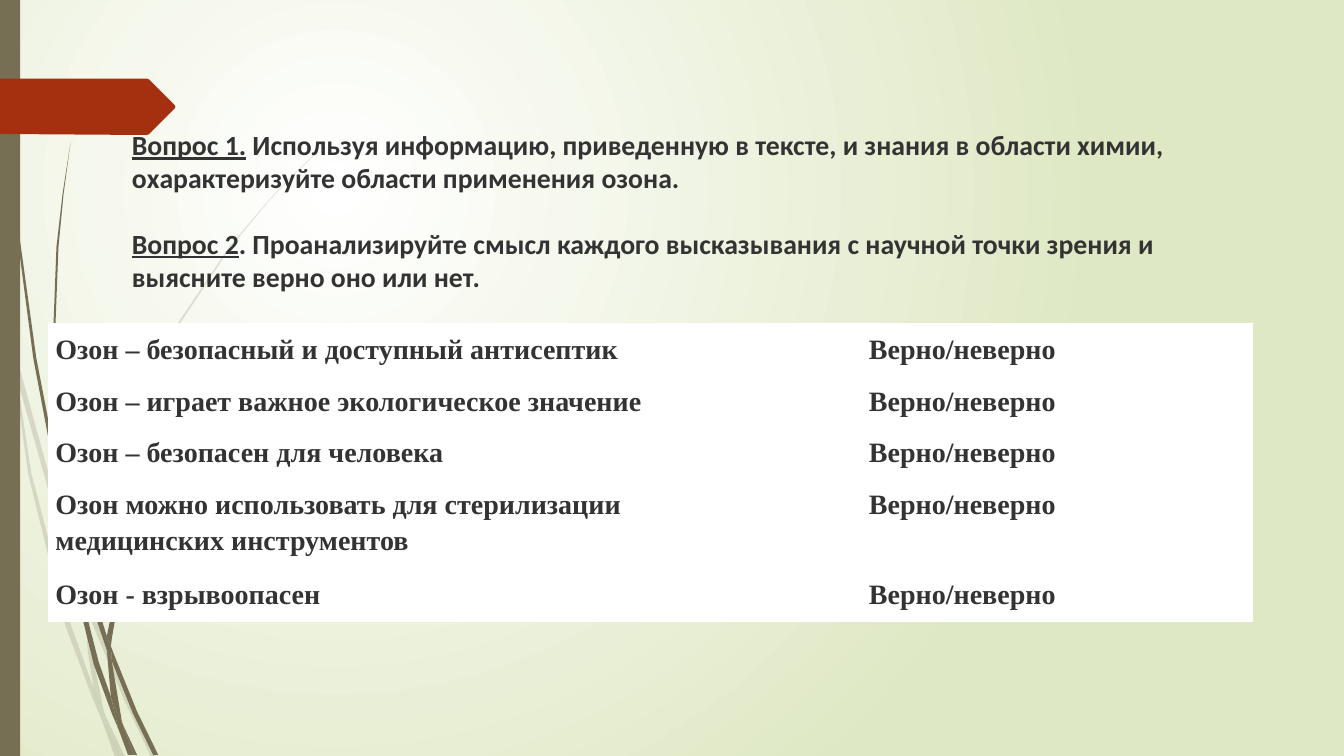
from lxml.etree import SubElement
from pptx import Presentation
from pptx.dml.color import RGBColor
from pptx.enum.shapes import MSO_SHAPE
from pptx.enum.text import MSO_ANCHOR, PP_ALIGN
from pptx.oxml.ns import qn
from pptx.util import Pt

SCALE = 9144  # EMU in one px, 100 px to the inch
WHITE = RGBColor(0xFF, 0xFF, 0xFF)
LIME = RGBColor(0xDF, 0xE8, 0xC4)
OLIVE = RGBColor(0x76, 0x6F, 0x54)
RUST = RGBColor(0xA5, 0x30, 0x10)
DARK = RGBColor(0x33, 0x33, 0x33)

# Outlines of the grass blades, as corner points in px
PALE = [
    [(11, 350), (9, 322), (0, 282), (0, 299), (10, 344)],
    [(58, 522), (84, 599), (85, 586), (62, 520), (14, 345), (17, 376)],
    [(92, 607), (88, 596), (88, 610), (123, 694), (150, 751), (155, 751),
     (127, 692)],
    [(119, 751), (124, 751), (105, 711)],
    [(93, 683), (70, 619), (31, 469), (17, 376), (11, 350), (28, 470),
     (65, 621), (92, 693), (101, 714), (99, 707)],
    [(84, 599), (87, 646), (93, 683), (96, 692), (105, 711), (103, 706),
     (91, 646), (88, 610), (88, 608)],
    [(88, 584), (110, 462), (160, 349), (229, 245), (268, 198), (290, 175),
     (312, 154), (312, 153), (289, 175), (268, 197), (228, 244), (158, 348),
     (107, 461), (85, 584), (85, 586), (88, 596)],
    [(101, 714), (114, 751), (119, 751)],
    [(88, 608), (88, 610), (88, 596), (85, 586), (84, 599)],
    [(96, 692), (93, 683), (99, 707), (101, 714), (119, 751), (105, 711)],
]
SOLID = [
    [(7, 110), (17, 233), (33, 355), (56, 477), (57, 481), (55, 457),
     (55, 453), (36, 355), (19, 232), (8, 109), (5, 48), (4, 0), (3, 0),
     (4, 48)],
    [(88, 592), (106, 645), (106, 633), (106, 631), (93, 590), (60, 472),
     (64, 505)],
    [(113, 649), (110, 641), (111, 656), (132, 708), (152, 749), (157, 749),
     (136, 706)],
    [(110, 691), (98, 657), (72, 556), (64, 505), (57, 477), (68, 557),
     (93, 659), (111, 708), (117, 722), (116, 717)],
    [(60, 472), (58, 453), (54, 349), (58, 245), (63, 193), (70, 141),
     (62, 193), (56, 245), (52, 349), (55, 449)],
    [(133, 749), (136, 749), (122, 719)],
    [(57, 477), (64, 505), (60, 472), (55, 449), (55, 453)],
    [(111, 633), (125, 552), (158, 476), (205, 406), (231, 374), (245, 359),
     (261, 344), (260, 344), (245, 358), (231, 373), (204, 405), (156, 474),
     (122, 551), (106, 631), (110, 641)],
    [(117, 722), (127, 749), (131, 749)],
    [(106, 645), (110, 691), (116, 706), (122, 719), (121, 716), (111, 656),
     (109, 651)],
    [(106, 645), (109, 651), (111, 656), (110, 641), (106, 631), (106, 633)],
    [(116, 706), (110, 691), (116, 717), (117, 722), (130, 749), (133, 749),
     (122, 719)],
]
ARROW = [(0, 78), (146, 78), (148, 79), (173, 104), (174, 106), (173, 108),
         (148, 133), (146, 134), (0, 133)]
ASKS = [
    ("Вопрос 1.", " Используя информацию, приведенную в тексте, и знания "
     "в области химии, охарактеризуйте области применения озона."),
    ("Вопрос 2", ". Проанализируйте смысл каждого высказывания с научной "
     "точки зрения и выясните верно оно или нет."),
]
CLAIMS = [
    "Озон – безопасный и доступный антисептик",
    "Озон – играет важное экологическое значение",
    "Озон – безопасен для человека",
    "Озон можно использовать для стерилизации медицинских инструментов",
    "Озон - взрывоопасен",
]
CHOICE = "Верно/неверно"
ROWS = [50, 50, 50, 86, 50]
COLS = [619, 575]


def px(*sizes):
    return [size * SCALE for size in sizes]


def apply(target, style):
    for name, value in style.items():
        setattr(target, name, value)


class Sheet:
    ask = {"name": "Calibri", "size": Pt(19.8), "bold": True}
    claim = {"name": "Times New Roman", "size": Pt(20), "bold": True}
    cell = dict(zip(("margin_left", "margin_right", "margin_top",
                     "margin_bottom"), px(7, 7, 6, 7)))
    frame = {"word_wrap": True, "vertical_anchor": MSO_ANCHOR.TOP,
             **dict(zip(("margin_left", "margin_right", "margin_top",
                         "margin_bottom"), px(10, 10, 5, 5)))}

    def __init__(self, deck):
        self.slide = deck.slides.add_slide(deck.slide_layouts[6])
        self.shapes = self.slide.shapes

    def glow(self, inner, outer):
        """Fill the background with a round gradient centred at upper left."""
        fill = self.slide.background.fill
        fill.gradient()
        for stop, color, place in zip(fill.gradient_stops, (inner, outer), (0, 1)):
            stop.color.rgb = color
            stop.position = place
        grad = self.slide.element.find(".//" + qn("a:gradFill"))
        grad.remove(grad.find(qn("a:lin")))
        circle = SubElement(grad, qn("a:path"), {"path": "circle"})
        SubElement(circle, qn("a:fillToRect"),
                   l="50000", t="50000", r="100000", b="100000")

    def paint(self, shape, color, alpha=100):
        shape.shadow.inherit = False
        shape.fill.solid()
        shape.fill.fore_color.rgb = color
        shape.line.fill.background()
        if alpha < 100:
            tone = shape.element.spPr.find(".//" + qn("a:srgbClr"))
            SubElement(tone, qn("a:alpha"), val=str(alpha * 1000))

    def shape(self, points, color, alpha=100):
        pen = self.shapes.build_freeform(*points[0], scale=SCALE)
        pen.add_line_segments(points[1:])
        self.paint(pen.convert_to_shape(), color, alpha)

    def bar(self, box, color):
        self.paint(self.shapes.add_shape(MSO_SHAPE.RECTANGLE, *px(*box)), color)

    def label(self, para, text, style, **more):
        run = para.add_run()
        run.text = text
        apply(run.font, {**style, **more})
        run.font.color.rgb = DARK

    def title(self, box, asks):
        frame = self.shapes.add_textbox(*px(*box)).text_frame
        apply(frame, self.frame)
        for i, (head, rest) in enumerate(asks):
            para = frame.add_paragraph() if i else frame.paragraphs[0]
            para.space_before = Pt(23 if i else 0)
            self.label(para, head, self.ask, underline=True)
            self.label(para, rest, self.ask)

    def table(self, left, top, cols, rows, texts):
        grid = self.shapes.add_table(
            len(rows), len(cols), *px(left, top, sum(cols), sum(rows))).table
        apply(grid, {"first_row": False, "horz_banding": False})
        for col, width in zip(grid.columns, px(*cols)):
            col.width = width
        for row, height, line in zip(grid.rows, px(*rows), texts):
            row.height = height
            for cell, text, align in zip(row.cells, line,
                                         (PP_ALIGN.LEFT, PP_ALIGN.CENTER)):
                apply(cell, self.cell)
                cell.fill.solid()
                cell.fill.fore_color.rgb = WHITE
                para = cell.text_frame.paragraphs[0]
                apply(para, {"alignment": align, "line_spacing": 1.15})
                self.label(para, text, self.claim)


def main():
    deck = Presentation()
    deck.slide_width, deck.slide_height = px(1333, 750)
    sheet = Sheet(deck)
    sheet.glow(WHITE, LIME)
    for blades, alpha in ((PALE, 20), (SOLID, 100)):
        for blade in blades:
            sheet.shape(blade, OLIVE, alpha)
    sheet.bar((0, 0, 20, 750), OLIVE)
    sheet.shape(ARROW, RUST)
    sheet.title((121, 122, 1120, 170), ASKS)
    sheet.table(48, 321, COLS, ROWS, [(claim, CHOICE) for claim in CLAIMS])
    deck.save("out.pptx")


if __name__ == "__main__":
    main()
